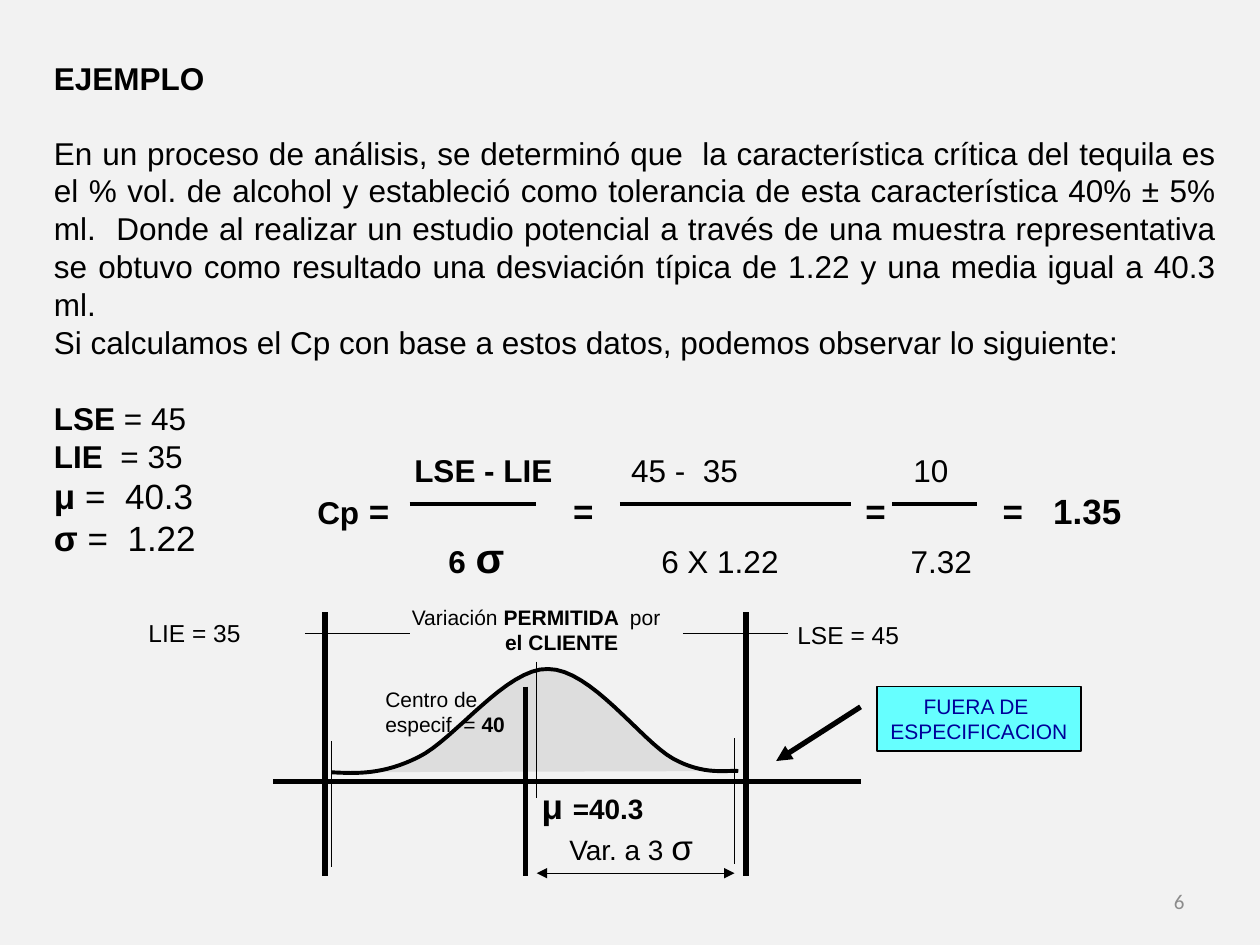
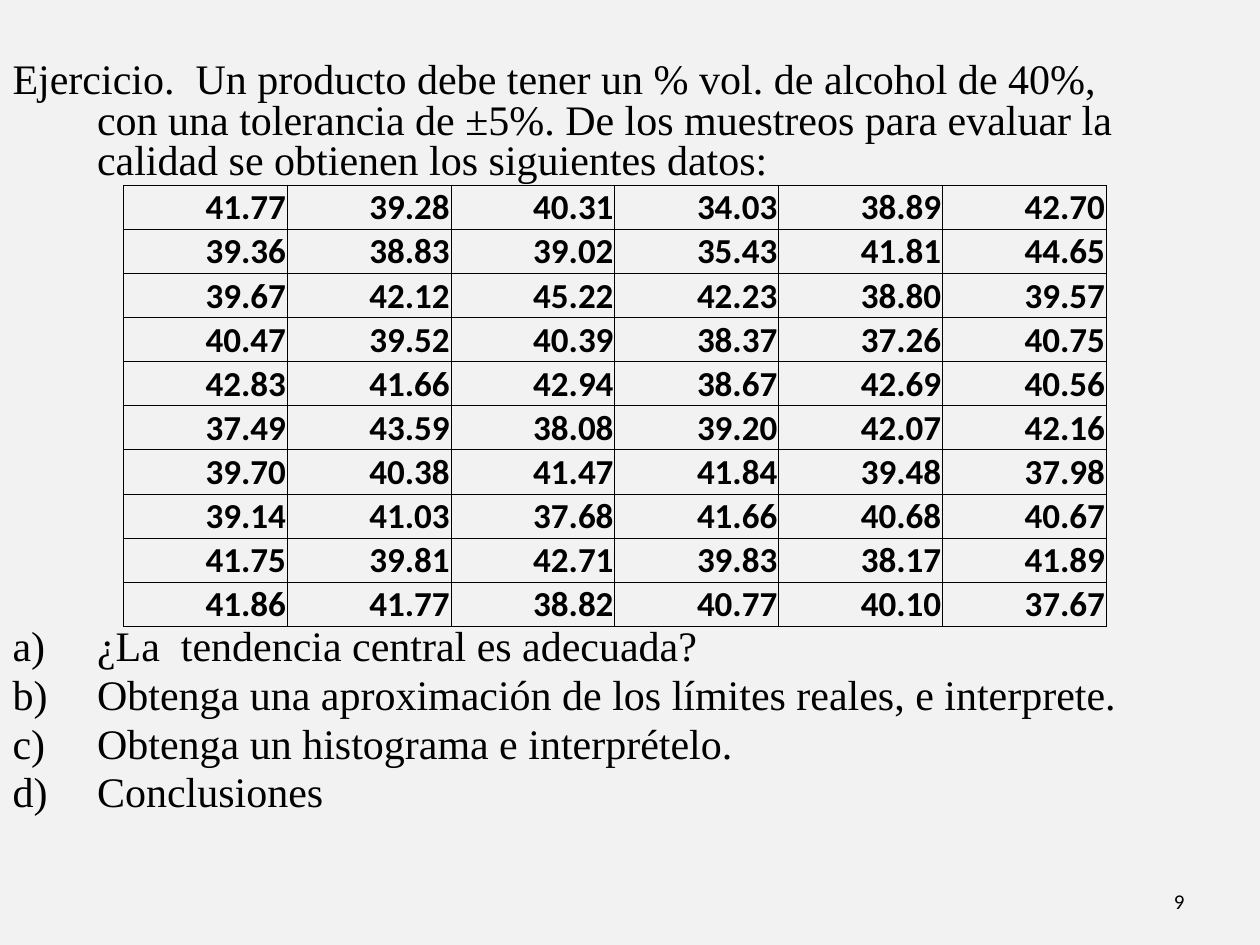
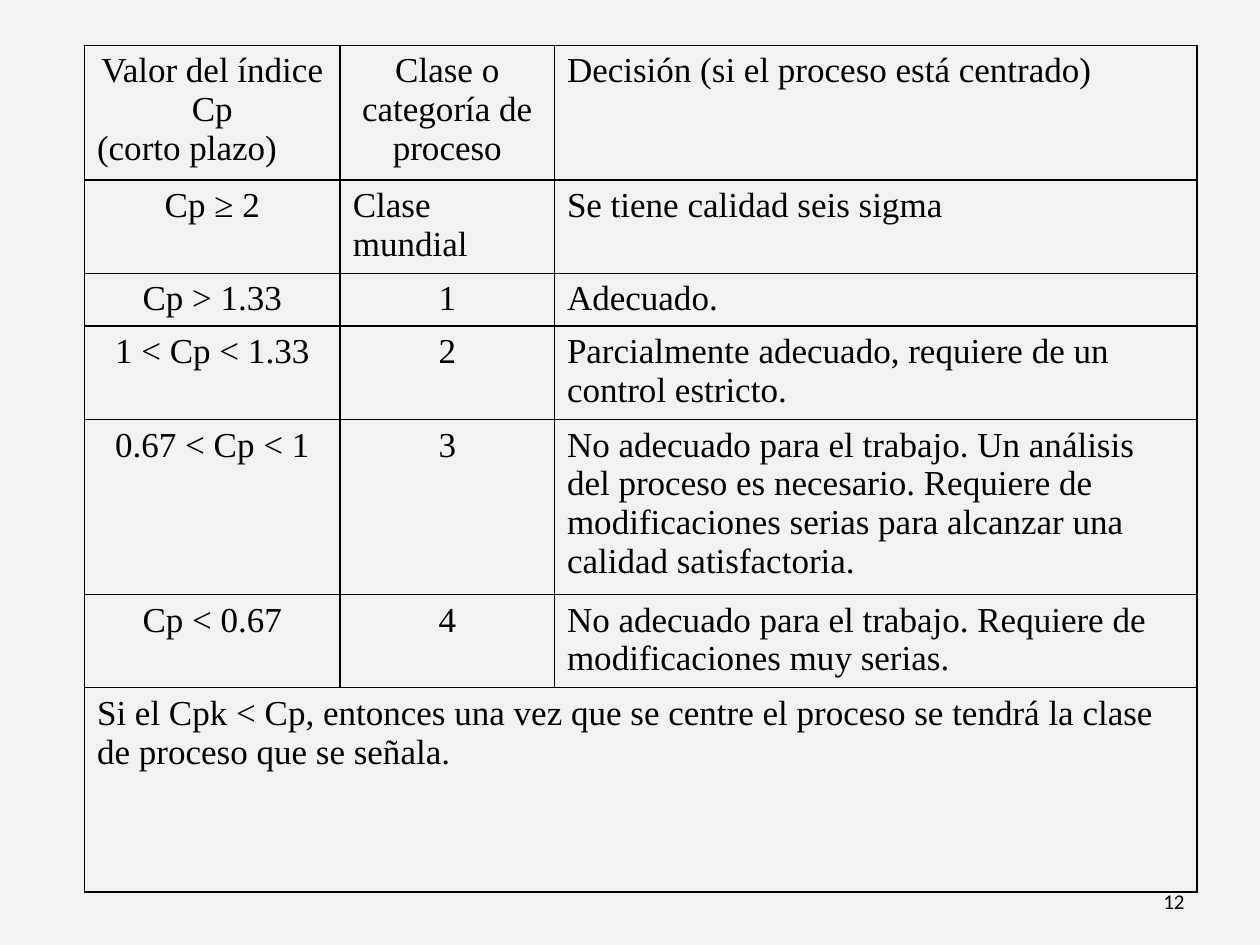
"""Builds three slides on the Cp process capability index."""

from lxml import etree
from pptx import Presentation
from pptx.dml.color import RGBColor
from pptx.enum.shapes import MSO_CONNECTOR, MSO_SHAPE
from pptx.enum.text import MSO_ANCHOR, MSO_AUTO_SIZE, PP_ALIGN
from pptx.oxml.ns import qn
from pptx.util import Inches, Pt

LEFT, CENTER, RIGHT, JUSTIFY = PP_ALIGN.LEFT, PP_ALIGN.CENTER, PP_ALIGN.RIGHT, PP_ALIGN.JUSTIFY
TOP, MIDDLE, BOTTOM = MSO_ANCHOR.TOP, MSO_ANCHOR.MIDDLE, MSO_ANCHOR.BOTTOM
STRAIGHT, RECTANGLE = MSO_CONNECTOR.STRAIGHT, MSO_SHAPE.RECTANGLE
NO_AUTOFIT = MSO_AUTO_SIZE.NONE

BACKGROUND = RGBColor(0xF2, 0xF2, 0xF2)
BLACK = RGBColor(0, 0, 0)
GRAY = RGBColor(0x8C, 0x8C, 0x8C)
CURVE_FILL = RGBColor(0xDD, 0xDD, 0xDD)
CYAN = RGBColor(0x66, 0xFF, 0xFF)
NAVY = RGBColor(0, 0, 0x99)
ARIAL, CALIBRI, TIMES = "Arial", "Calibri", "Times New Roman"
BLANK_LAYOUT, BODY_LAYOUT = 6, 1

EXAMPLE = [
    [("EJEMPLO", 18, True)],
    [("En un proceso de análisis, se determinó que  la característica crítica del tequila es "
      "el % vol. de alcohol y estableció como tolerancia de esta característica 40% ± 5% ml.  "
      "Donde al realizar un estudio potencial a través de una muestra representativa se obtuvo "
      "como resultado una desviación típica de 1.22 y una media igual a 40.3 ml.", 18, False)],
    [("Si calculamos el Cp con base a estos datos, podemos observar lo siguiente:", 18, False)],
    [("LSE", 18, True), (" = 45", 18, False)],
    [("LIE ", 18, True), (" = 35", 18, False)],
    [("μ", 20, True), (" =  40.3", 20, False)],
    [("σ", 20, True), (" =  1.22", 20, False)],
]
EXAMPLE_GAPS = {1: 21, 3: 22}

FORMULA = [
    [("\t", 20, True), ("LSE - LIE", 18, True), ("\t45 -  35\t10", 18, False)],
    [("Cp", 18, True), (" =\t=\t=\t=\t1.35", 20, True)],
    [("\t6", 18, True), (" ", 20, False), ("σ", 24, True), ("\t6 X 1.22\t7.32", 18, False)],
]
FORMULA_TABS = [(0.77, 2.49, 4.73), (2.03, 4.35, 5.44, 5.84), (1.04, 2.73, 4.71)]

LABELS = [
    ((4.2, 6.18, 1.01, 0.44), False, [[("μ ", 20, True), ("=40.3", 16, True)]]),
    ((2.96, 5.4, 1.16, 0.5), False,
     [[("Centro de", 12, False)], [("especif. = ", 12, False), ("40", 12, True)]]),
    ((6.23, 4.87, 1.01, 0.34), False, [[("LSE = 45", 14, False)]]),
    ((1.08, 4.86, 1.27, 0.33), True, [[("LIE = 35", 14, False)]]),
    ((4.42, 6.5, 1.21, 0.43), False, [[("Var. a 3 ", 16, False), ("σ", 20, False)]]),
]
CUSTOMER = [
    [("Variación ", 12, False), ("PERMITIDA ", 12, True), (" por", 12, False)],
    [("el CLIENTE", 12, True)],
]
OUT_OF_SPEC = [[("FUERA DE ", 12, False)], [("ESPECIFICACION", 12, False)]]

CURVE_START = (2.63, 6.13)
CURVE = [
    ((2.83, 6.14), (3.04, 6.15), (3.32, 6.01)),
    ((3.61, 5.87), (4.02, 5.3), (4.35, 5.31)),
    ((4.69, 5.31), (5.09, 5.88), (5.34, 6.02)),
    ((5.59, 6.16), (5.78, 6.11), (5.86, 6.12)),
]
CURVE_STEPS = 16

LINES_BY_WIDTH = {
    0.75: [(4.26, 5.25, 4.26, 6.33), (2.63, 5.88, 2.63, 6.88), (5.83, 5.86, 5.83, 6.86),
           (2.42, 5.03, 3.25, 5.03), (5.42, 5.03, 6.25, 5.03)],
    2.25: [(3.25, 4, 4.25, 4), (4.92, 4, 6.75, 4), (7.08, 4, 7.75, 4)],
    3: [(2.17, 6.2, 6.83, 6.2), (5.92, 4.86, 5.92, 6.95), (4.17, 5.45, 4.17, 6.95),
        (2.58, 4.86, 2.58, 6.95)],
}

EXERCISE = ("Ejercicio.  Un producto debe tener un % vol. de alcohol de 40%, con una tolerancia "
            "de ±5%. De los muestreos para evaluar la calidad se obtienen los siguientes datos:")
QUESTIONS = [
    "¿La  tendencia central es adecuada?",
    "Obtenga una aproximación de los límites reales, e interprete.",
    "Obtenga un histograma e interprételo.",
    "Conclusiones",
]
SAMPLES = [
    ("41.77", "39.28", "40.31", "34.03", "38.89", "42.70"),
    ("39.36", "38.83", "39.02", "35.43", "41.81", "44.65"),
    ("39.67", "42.12", "45.22", "42.23", "38.80", "39.57"),
    ("40.47", "39.52", "40.39", "38.37", "37.26", "40.75"),
    ("42.83", "41.66", "42.94", "38.67", "42.69", "40.56"),
    ("37.49", "43.59", "38.08", "39.20", "42.07", "42.16"),
    ("39.70", "40.38", "41.47", "41.84", "39.48", "37.98"),
    ("39.14", "41.03", "37.68", "41.66", "40.68", "40.67"),
    ("41.75", "39.81", "42.71", "39.83", "38.17", "41.89"),
    ("41.86", "41.77", "38.82", "40.77", "40.10", "37.67"),
]

CLASSES = [
    ("Valor del índice Cp\n(corto plazo)", "Clase o categoría de proceso",
     "Decisión (si el proceso está centrado)"),
    ("Cp ≥ 2", "Clase mundial", "Se tiene calidad seis sigma"),
    ("Cp > 1.33", "1", "Adecuado."),
    ("1 < Cp < 1.33", "2", "Parcialmente adecuado, requiere de un control estricto."),
    ("0.67 < Cp < 1", "3",
     "No adecuado para el trabajo. Un análisis del proceso es necesario. Requiere de "
     "modificaciones serias para alcanzar una calidad satisfactoria."),
    ("Cp < 0.67", "4", "No adecuado para el trabajo. Requiere de modificaciones muy serias."),
    ("Si el Cpk < Cp, entonces una vez que se centre el proceso se tendrá la clase de proceso "
     "que se señala.",),
]
CLASS_ALIGN = (CENTER, CENTER, LEFT)
LEFT_TEXTS = {"(corto plazo)", "Clase mundial", CLASSES[-1][0]}
CLASS_COLS = (2.03, 1.7, 5.1)
CLASS_ROWS = (1.07, 0.74, 0.42, 0.74, 1.39, 0.74, 1.62)


def box(*lengths):
    return [Inches(v) for v in lengths]


def write(tf, paragraphs, font=ARIAL, color=BLACK, align=LEFT):
    for i, runs in enumerate(paragraphs):
        p = tf.add_paragraph() if i else tf.paragraphs[0]
        p.alignment = align
        for text, size, bold in runs:
            r = p.add_run()
            r.text = text
            r.font.size, r.font.bold, r.font.name = Pt(size), bold, font
            r.font.color.rgb = color


def add_text(slide, at, paragraphs, wrap=True, **style):
    tf = slide.shapes.add_textbox(*box(*at)).text_frame
    tf.word_wrap = wrap
    write(tf, paragraphs, **style)
    return tf


def add_slide(prs, layout, number, color=BLACK):
    slide = prs.slides.add_slide(prs.slide_layouts[layout])
    fill = slide.background.fill
    fill.solid()
    fill.fore_color.rgb = BACKGROUND
    tf = add_text(slide, (7.17, 6.95, 2.33, 0.4), [[(number, 12, False)]],
                  font=CALIBRI, color=color, align=RIGHT)
    tf.vertical_anchor = MIDDLE
    return slide


def add_line(slide, ends, width, arrows=()):
    sp = slide.shapes.add_connector(STRAIGHT, *box(*ends))
    sp.line.width = Pt(width)
    sp.line.color.rgb = BLACK
    ln = sp.line._get_or_add_ln()
    for tag in arrows:
        etree.SubElement(ln, qn(tag), type="triangle")
    etree.SubElement(sp._element.spPr, qn("a:effectLst"))


def paint(sp, fill, width):
    sp.shadow.inherit = False
    sp.fill.solid()
    sp.fill.fore_color.rgb = fill
    sp.line.color.rgb = BLACK
    sp.line.width = Pt(width)


def add_curve(slide):
    start, points = CURVE_START, []
    for a, b, end in CURVE:
        for step in range(1, CURVE_STEPS + 1):
            t = step / CURVE_STEPS
            u = 1 - t
            points.append(tuple(
                Inches(u ** 3 * start[k] + 3 * u * u * t * a[k] + 3 * u * t * t * b[k]
                       + t ** 3 * end[k]) for k in (0, 1)))
        start = end
    builder = slide.shapes.build_freeform(*box(*CURVE_START))
    builder.add_line_segments(points, close=False)
    paint(builder.convert_to_shape(), CURVE_FILL, 2.25)


def add_table(slide, left, top, cols, rows, border):
    table = slide.shapes.add_table(
        len(rows), len(cols), *box(left, top, sum(cols), sum(rows))).table
    table.first_row = table.horz_banding = False
    for column, width in zip(table.columns, cols):
        column.width = Inches(width)
    for row, height in zip(table.rows, rows):
        row.height = Inches(height)
    for cell in table.iter_cells():
        tcPr = cell._tc.get_or_add_tcPr()
        for side in ("a:lnL", "a:lnR", "a:lnT", "a:lnB"):
            ln = etree.SubElement(tcPr, qn(side), w=str(Pt(border)))
            fill = etree.SubElement(ln, qn("a:solidFill"))
            etree.SubElement(fill, qn("a:srgbClr"), val=str(BLACK))
        cell.fill.background()
    return table


def fill_cell(cell, paragraphs, insets, anchor, **style):
    cell.margin_left, cell.margin_top, cell.margin_right, cell.margin_bottom = box(*insets)
    cell.vertical_anchor = anchor
    write(cell.text_frame, paragraphs, **style)


def build_example(prs):
    slide = add_slide(prs, BLANK_LAYOUT, "6", GRAY)
    add_curve(slide)
    for width, lines in LINES_BY_WIDTH.items():
        for ends in lines:
            add_line(slide, ends, width)
    add_line(slide, (4.26, 6.93, 5.83, 6.93), 0.75, ("a:headEnd", "a:tailEnd"))
    add_line(slide, (6.83, 5.61, 6.16, 6.04), 3, ("a:tailEnd",))

    tf = add_text(slide, (0.33, 0.42, 9.42, 4.11), EXAMPLE, align=JUSTIFY)
    for i, gap in EXAMPLE_GAPS.items():
        tf.paragraphs[i].space_before = Pt(gap)
    tf = add_text(slide, (2.42, 3.5, 7.17, 1.41), FORMULA)
    for p, stops in zip(tf.paragraphs, FORMULA_TABS):
        tabs = etree.SubElement(p._p.get_or_add_pPr(), qn("a:tabLst"))
        for stop in stops:
            etree.SubElement(tabs, qn("a:tab"), pos=str(Inches(stop)), algn="l")
    for at, wrap, paragraphs in LABELS:
        add_text(slide, at, paragraphs, wrap)
    tf = add_text(slide, (3.17, 4.75, 2.19, 0.5), CUSTOMER, False)
    tf.paragraphs[1]._p.get_or_add_pPr().set("marL", str(Inches(0.74)))

    sp = slide.shapes.add_shape(RECTANGLE, *box(6.96, 5.45, 1.62, 0.51))
    paint(sp, CYAN, 0.75)
    sp.text_frame.word_wrap = False
    write(sp.text_frame, OUT_OF_SPEC, color=NAVY, align=CENTER)


def build_exercise(prs):
    slide = add_slide(prs, BODY_LAYOUT, "9")
    title = slide.shapes.title._element
    title.getparent().remove(title)
    body = slide.placeholders[1]
    body.left, body.top, body.width, body.height = box(0, 0.45, 9.13, 6.77)
    tf = body.text_frame
    tf.auto_size = NO_AUTOFIT
    write(tf, [[(text, 24, False)] for text in [EXERCISE] + QUESTIONS], font=TIMES)
    for i, p in enumerate(tf.paragraphs):
        p.line_spacing = Pt(23)
        p.space_before = Pt((0, 255)[i] if i < 2 else 4.8)
        pPr = p._p.get_or_add_pPr()
        pPr.set("marL", str(Inches(0.67)))
        pPr.set("indent", str(-Inches(0.67)))
        if i:
            etree.SubElement(pPr, qn("a:buFont"), typeface=TIMES)
            etree.SubElement(pPr, qn("a:buAutoNum"), type="alphaLcParenR")
        else:
            etree.SubElement(pPr, qn("a:buNone"))

    table = add_table(slide, 0.98, 1.47, [1.3] * 6, [0.35] * len(SAMPLES), 0.5)
    for r, row in enumerate(SAMPLES):
        for c, value in enumerate(row):
            fill_cell(table.cell(r, c), [[(value, 20, True)]], (0.01, 0.01, 0.01, 0), BOTTOM,
                      font=CALIBRI, align=RIGHT)


def build_classes(prs):
    slide = add_slide(prs, BLANK_LAYOUT, "12")
    table = add_table(slide, 0.67, 0.36, CLASS_COLS, CLASS_ROWS, 1)
    last = len(CLASSES) - 1
    table.cell(last, 0).merge(table.cell(last, len(CLASS_COLS) - 1))
    for r, row in enumerate(CLASSES):
        for c, text in enumerate(row):
            lines = text.split("\n")
            cell = table.cell(r, c)
            fill_cell(cell, [[(line, 20, False)] for line in lines], (0.1, 0.05, 0.1, 0), TOP,
                      font=TIMES, align=CLASS_ALIGN[c])
            for p, line in zip(cell.text_frame.paragraphs, lines):
                if line in LEFT_TEXTS:
                    p.alignment = LEFT


def main():
    prs = Presentation()
    prs.slide_width, prs.slide_height = box(10, 7.5)
    build_example(prs)
    build_exercise(prs)
    build_classes(prs)
    prs.save("out.pptx")


if __name__ == "__main__":
    main()
